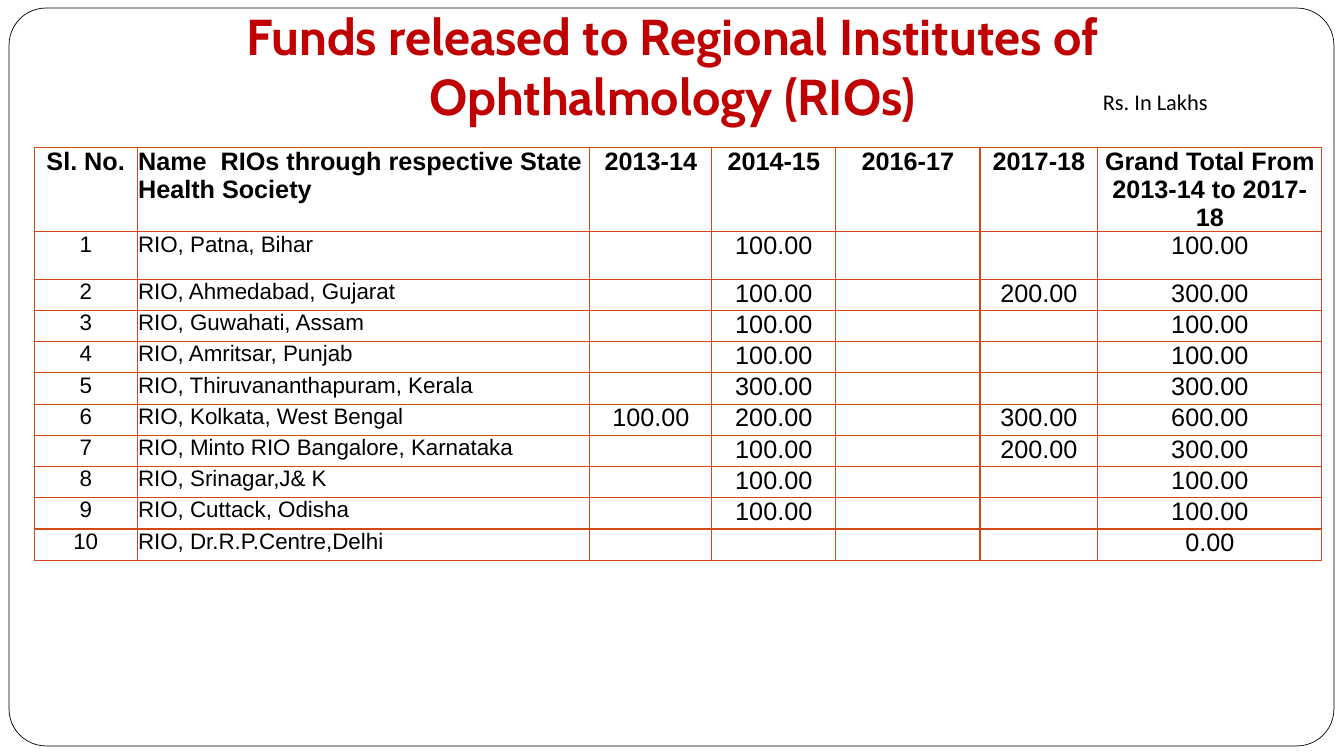
from lxml import etree
from pptx import Presentation
from pptx.dml.color import RGBColor
from pptx.enum import shapes, text
from pptx.oxml.ns import qn
from pptx.util import Inches, Pt

TITLE = "Funds released to Regional Institutes of Ophthalmology (RIOs)"
UNIT = "Rs. In Lakhs"
HEADER = ["Sl. No.", "Name  RIOs through respective State Health Society",
          "2013-14", "2014-15", "2016-17", "2017-18",
          "Grand Total From 2013-14 to 2017-18"]
# Institute, then the four yearly amounts and the grand total
FUNDS = [
    ("RIO, Patna, Bihar", "", "100.00", "", "", "100.00"),
    ("RIO, Ahmedabad, Gujarat", "", "100.00", "", "200.00", "300.00"),
    ("RIO, Guwahati, Assam", "", "100.00", "", "", "100.00"),
    ("RIO, Amritsar, Punjab", "", "100.00", "", "", "100.00"),
    ("RIO, Thiruvananthapuram, Kerala", "", "300.00", "", "", "300.00"),
    ("RIO, Kolkata, West Bengal", "100.00", "200.00", "", "300.00", "600.00"),
    ("RIO, Minto RIO Bangalore, Karnataka", "", "100.00", "", "200.00", "300.00"),
    ("RIO, Srinagar,J& K", "", "100.00", "", "", "100.00"),
    ("RIO, Cuttack, Odisha", "", "100.00", "", "", "100.00"),
    ("RIO, Dr.R.P.Centre,Delhi", "", "", "", "", "0.00"),
]
COLUMN_WIDTHS = [1.02, 4.49, 1.21, 1.23, 1.43, 1.17, 2.22]
ROW_HEIGHTS = [0.84, 0.47] + [0.31] * (len(FUNDS) - 1)
NAME_COLUMN = 1
BORDER = "D34817"


def color(value):
    return RGBColor.from_string(value)


def write(frame, content, size, font="Arial", ink="000000", bold=False, centered=True):
    para = frame.paragraphs[0]
    para.alignment = text.PP_ALIGN.CENTER if centered else text.PP_ALIGN.LEFT
    if content:
        span = para.add_run()
        span.text = content
        span.font.size = Pt(size)
        span.font.name = font
        span.font.bold = bold
        span.font.color.rgb = color(ink)


def add_borders(cell):
    """Draw all four edges; they must precede the fill in the cell properties."""
    properties = cell._tc.get_or_add_tcPr()
    for place, edge in enumerate(("lnL", "lnR", "lnT", "lnB")):
        line = etree.Element(qn(f"a:{edge}"), w=str(Pt(1)))
        fill = etree.SubElement(line, qn("a:solidFill"))
        etree.SubElement(fill, qn("a:srgbClr"), val=BORDER)
        properties.insert(place, line)


def add_text(page, content, left, top, width, height, wrap=True, **style):
    box = page.shapes.add_textbox(Inches(left), Inches(top), Inches(width), Inches(height))
    box.text_frame.word_wrap = wrap
    write(box.text_frame, content, **style)


def add_frame(page):
    frame = page.shapes.add_shape(shapes.MSO_SHAPE.ROUNDED_RECTANGLE,
                                  Inches(0.09), Inches(0.08), Inches(13.14), Inches(7.32))
    frame.adjustments[0] = 0.05
    frame.shadow.inherit = False
    frame.fill.solid()
    frame.fill.fore_color.rgb = color("FFFFFF")
    frame.line.color.rgb = color("000000")
    frame.line.width = Pt(0.5)


def add_funds_table(page):
    rows = [HEADER] + [(str(number), *fund) for number, fund in enumerate(FUNDS, 1)]
    table = page.shapes.add_table(len(rows), len(HEADER), Inches(0.34), Inches(1.46),
                                  Inches(sum(COLUMN_WIDTHS)), Inches(sum(ROW_HEIGHTS))).table
    table.horz_banding = False
    for column, width in zip(table.columns, COLUMN_WIDTHS):
        column.width = Inches(width)
    for r, (values, height) in enumerate(zip(rows, ROW_HEIGHTS)):
        table.rows[r].height = Inches(height)
        for c, value in enumerate(values):
            cell = table.cell(r, c)
            cell.margin_left = cell.margin_right = Inches(0.01)
            cell.margin_top = cell.margin_bottom = 0
            cell.fill.background()
            add_borders(cell)
            is_header = r == 0
            size = 18 if is_header or c > NAME_COLUMN else 16
            write(cell.text_frame, value, size, bold=is_header, centered=c != NAME_COLUMN)


def main():
    deck = Presentation()
    deck.slide_width, deck.slide_height = Inches(13.33), Inches(7.5)
    page = deck.slides.add_slide(deck.slide_layouts[6])
    add_frame(page)
    add_funds_table(page)
    add_text(page, TITLE, 0.67, 0, 12, 0.67, size=36, font="Cabin", ink="C00000", bold=True)
    add_text(page, UNIT, 10.84, 0.83, 1.25, 0.37, wrap=False, size=16, font="Calibri",
             centered=False)
    deck.save("out.pptx")


if __name__ == "__main__":
    main()
